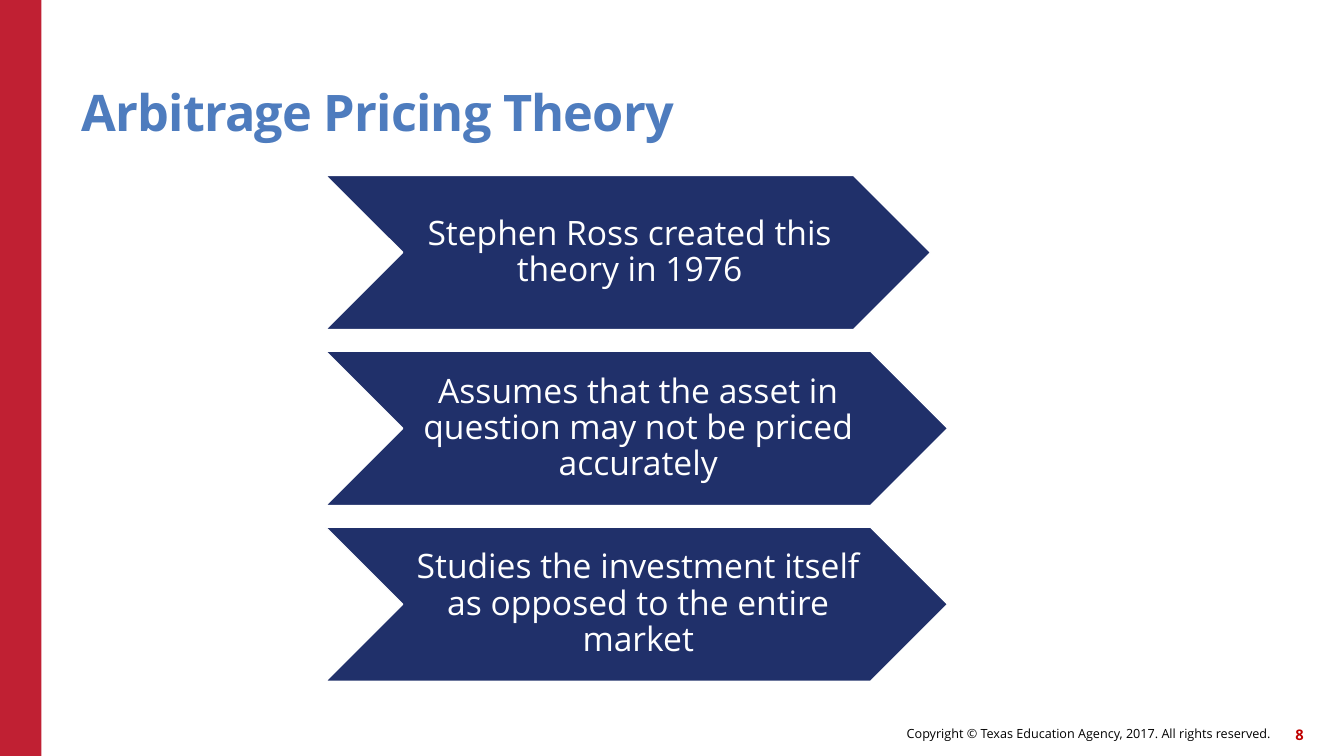
from pptx import Presentation
from pptx.dml.color import RGBColor
from pptx.enum import shapes, text
from pptx.util import Inches, Pt

HUES = {"red": "C02033", "navy": "20306A", "blue": "4E7CBE",
        "white": "FFFFFF", "black": "000000", "page": "C00000"}
FONT = "Open Sans"
ALIGN = text.PP_ALIGN
ANCHOR = text.MSO_ANCHOR
POINTS = [("Stephen Ross created this theory in 1976", 6),
          ("Assumes that the asset in question may not be priced accurately", 6.17),
          ("Studies the investment itself as opposed to the entire market", 6.17)]


def hue(name):
    return RGBColor.from_string(HUES[name])


def add_form(slide, kind, box, fill):
    form = slide.shapes.add_shape(kind, *map(Inches, box))
    form.shadow.inherit = False
    form.fill.solid()
    form.fill.fore_color.rgb = hue(fill)
    form.line.fill.background()
    return form


def add_label(slide, box, words, size, color, align=ALIGN.LEFT, bold=False,
              anchor=ANCHOR.MIDDLE, pads=(0, 0, 0, 0), lead=None):
    frame = slide.shapes.add_textbox(*map(Inches, box)).text_frame
    frame.word_wrap = True
    frame.vertical_anchor = anchor
    (frame.margin_left, frame.margin_top,
     frame.margin_right, frame.margin_bottom) = map(Inches, pads)
    para = frame.paragraphs[0]
    para.alignment = align
    if lead:
        para.line_spacing = lead
    run = para.add_run()
    run.text = words
    run.font.name = FONT
    run.font.size = Pt(size)
    run.font.bold = bold
    run.font.color.rgb = hue(color)
    return run


def add_title(slide, box, words):
    run = add_label(slide, box, words, 36, "blue", bold=True,
                    anchor=ANCHOR.BOTTOM, lead=0.9)
    run.font._element.set("spc", "-60")


def add_arrows(slide, box):
    left, top, high, step = box
    notch = high / 2
    for row, (words, wide) in enumerate(POINTS):
        y = top + row * step
        arrow = add_form(slide, shapes.MSO_SHAPE.CHEVRON,
                         (left, y, wide, high), "navy")
        arrow.line.color.rgb = hue("white")
        arrow.line.width = Pt(1)
        # Label between the notch and the tip
        add_label(slide, (left + notch, y, wide - high, high), words, 24,
                  "white", ALIGN.CENTER, pads=(0.03, 0.02, 0, 0.02), lead=0.9)


def add_footer(slide, box):
    left, top, wide, high = box
    page = 0.42
    add_label(slide, (left, top, 6.46, high),
              "Copyright © Texas Education Agency, 2017. All rights reserved.",
              9, "black", ALIGN.RIGHT)
    add_label(slide, (left + wide - page, top + 0.01, page, high), "8",
              10.5, "page", ALIGN.RIGHT, bold=True)


def main():
    deck = Presentation()
    deck.slide_width, deck.slide_height = Inches(13.33), Inches(7.5)
    slide = deck.slides.add_slide(deck.slide_layouts[6])
    # Side band
    add_form(slide, shapes.MSO_SHAPE.RECTANGLE, (0, 0, 0.41, 7.5), "red")
    add_footer(slide, (6.14, 7.12, 6.79, 0.32))
    add_title(slide, (0.81, 0.45, 11, 0.96), "Arbitrage Pricing Theory")
    # Left, top, arrow height and row step
    add_arrows(slide, (3.23, 1.74, 1.53, 1.745))
    deck.save("out.pptx")


if __name__ == "__main__":
    main()
